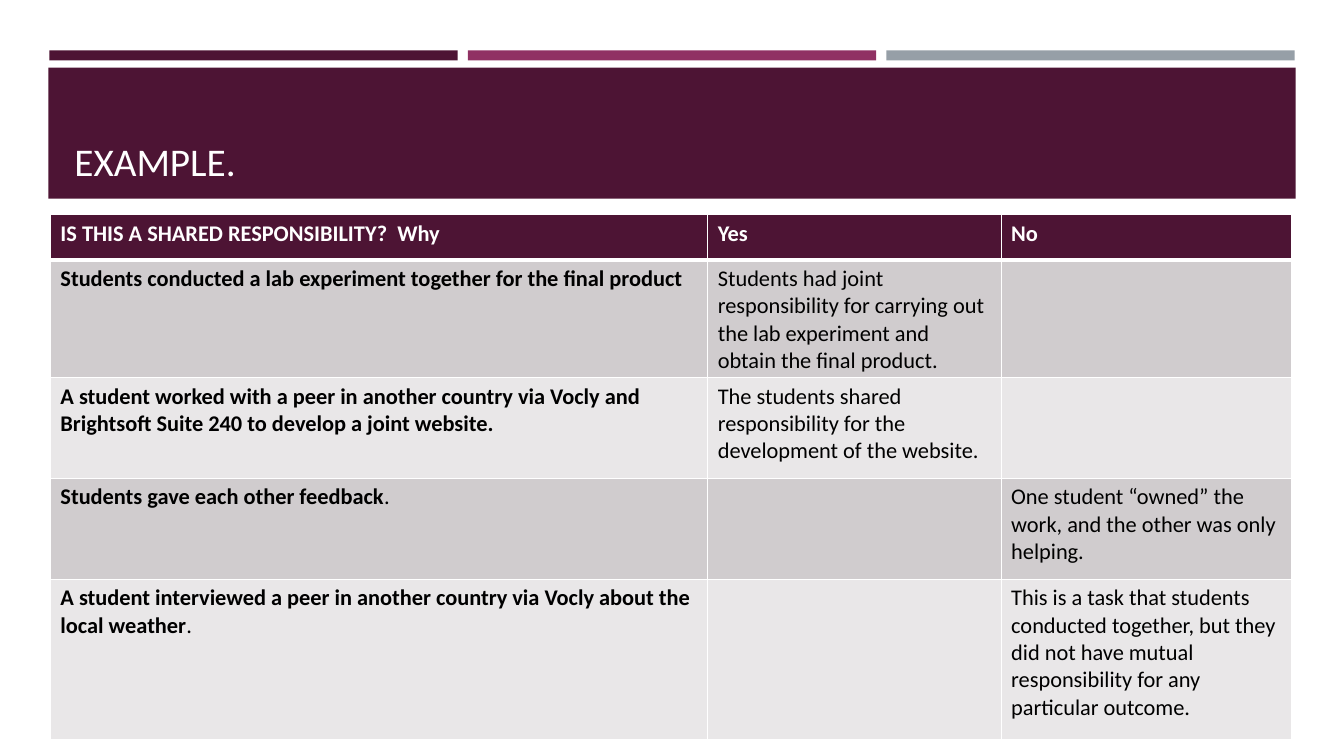
from lxml import etree
from pptx import Presentation
from pptx.dml.color import RGBColor
from pptx.enum.shapes import MSO_SHAPE as SHAPE
from pptx.enum.text import MSO_ANCHOR as ANCHOR
from pptx.oxml.ns import qn
from pptx.util import Inches, Pt

FONT = "Calibri"
PLUM = RGBColor(0x4D, 0x14, 0x34)
MAGENTA = RGBColor(0x90, 0x31, 0x63)
SLATE = RGBColor(0x96, 0x9F, 0xA7)
DARK_BAND = RGBColor(0xD0, 0xCC, 0xCE)
LIGHT_BAND = RGBColor(0xE9, 0xE7, 0xE8)
WHITE = RGBColor(0xFF, 0xFF, 0xFF)
BLACK = RGBColor(0, 0, 0)

COL_WIDTHS = [6.52, 2.91, 2.88]
ROW_HEIGHTS = [0.45, 1, 1, 1, 1.59]
HEADER = ["IS THIS A SHARED RESPONSIBILITY?\u00a0 Why", "Yes", "No"]
EXAMPLES = [
    ("Students conducted a lab experiment together for the final product", "",
     "Students had joint responsibility for carrying out the lab experiment "
     "and obtain the final product.", ""),
    ("A student worked with a peer in another country via Vocly and "
     "Brightsoft Suite 240 to develop a joint website.", "",
     "The students shared responsibility for the development of the website.", ""),
    ("Students gave each other feedback", ".", "",
     "One student “owned” the work, and the other was only helping."),
    ("A student interviewed a peer in another country via Vocly about the "
     "local weather", ".", "",
     "This is a task that students conducted together, but they did not have "
     "mutual responsibility for any particular outcome."),
]


def add_bar(slide, left, top, width, height, color):
    """Add a plain filled rectangle."""
    sp = slide.shapes.add_shape(
        SHAPE.RECTANGLE, Inches(left), Inches(top), Inches(width), Inches(height))
    sp.shadow.inherit = False
    sp.fill.solid()
    sp.fill.fore_color.rgb = color
    sp.line.fill.background()
    return sp


def add_accents(slide, left, top, width, height, gap=0.1):
    """Add three equal accent bars across the box."""
    colors = [PLUM, MAGENTA, SLATE]
    bar = (width - gap * (len(colors) - 1)) / len(colors)
    for i, color in enumerate(colors):
        add_bar(slide, left + i * (bar + gap), top, bar, height, color)


def add_title(slide, left, top, width, height, text):
    """Add the title band with its text at the bottom left."""
    add_bar(slide, left, top, width, height, PLUM)
    box = slide.shapes.add_textbox(
        Inches(left + 0.16), Inches(top + 0.1),
        Inches(width - 0.31), Inches(height - 0.19))
    tf = box.text_frame
    tf.word_wrap = True
    tf.vertical_anchor = ANCHOR.BOTTOM
    p = tf.paragraphs[0]
    p.text = text
    p.font.name = FONT
    p.font.size = Pt(28)
    p.font.color.rgb = WHITE


def set_borders(cell, top=1, bottom=1):
    """Draw white borders with the given top and bottom widths in points."""
    tc_pr = cell._tc.get_or_add_tcPr()
    for tag, width in (("lnL", 1), ("lnR", 1), ("lnT", top), ("lnB", bottom)):
        ln = etree.SubElement(tc_pr, qn(f"a:{tag}"), w=str(Pt(width)))
        fill = etree.SubElement(ln, qn("a:solidFill"))
        etree.SubElement(fill, qn("a:srgbClr"), val=str(WHITE))


def fill_cell(cell, fill, color, bold="", plain=""):
    """Fill a cell and write its bold text followed by its plain text."""
    cell.fill.solid()
    cell.fill.fore_color.rgb = fill
    p = cell.text_frame.paragraphs[0]
    p.font.name = FONT
    p.font.size = Pt(16)
    p.font.color.rgb = color
    for text, is_bold in ((bold, True), (plain, False)):
        if text:
            r = p.add_run()
            r.text = text
            r.font.bold = is_bold


def add_examples(slide, left, top):
    """Add the table of examples sorted into yes and no."""
    table = slide.shapes.add_table(
        len(ROW_HEIGHTS), len(COL_WIDTHS), Inches(left), Inches(top),
        Inches(sum(COL_WIDTHS)), Inches(sum(ROW_HEIGHTS))).table
    for column, width in zip(table.columns, COL_WIDTHS):
        column.width = Inches(width)
    for i, (row, height) in enumerate(zip(table.rows, ROW_HEIGHTS)):
        row.height = Inches(height)
        for cell in row.cells:
            set_borders(cell, 3 if i == 1 else 1, 3 if i == 0 else 1)
    for j, text in enumerate(HEADER):
        fill_cell(table.cell(0, j), PLUM, WHITE, bold=text)
    for i, (task, ending, yes, no) in enumerate(EXAMPLES, 1):
        band = DARK_BAND if i % 2 else LIGHT_BAND
        fill_cell(table.cell(i, 0), band, BLACK, task, ending)
        fill_cell(table.cell(i, 1), band, BLACK, plain=yes)
        fill_cell(table.cell(i, 2), band, BLACK, plain=no)


def main():
    """Build the slide and save it."""
    prs = Presentation()
    prs.slide_width, prs.slide_height = Inches(13.33), Inches(7.5)
    slide = prs.slides.add_slide(prs.slide_layouts[6])
    add_accents(slide, 0.49, 0.5, 12.35, 0.1)
    add_title(slide, 0.48, 0.67, 12.37, 1.3, "EXAMPLE.")
    add_examples(slide, 0.5, 2.13)
    prs.save("out.pptx")


if __name__ == "__main__":
    main()
